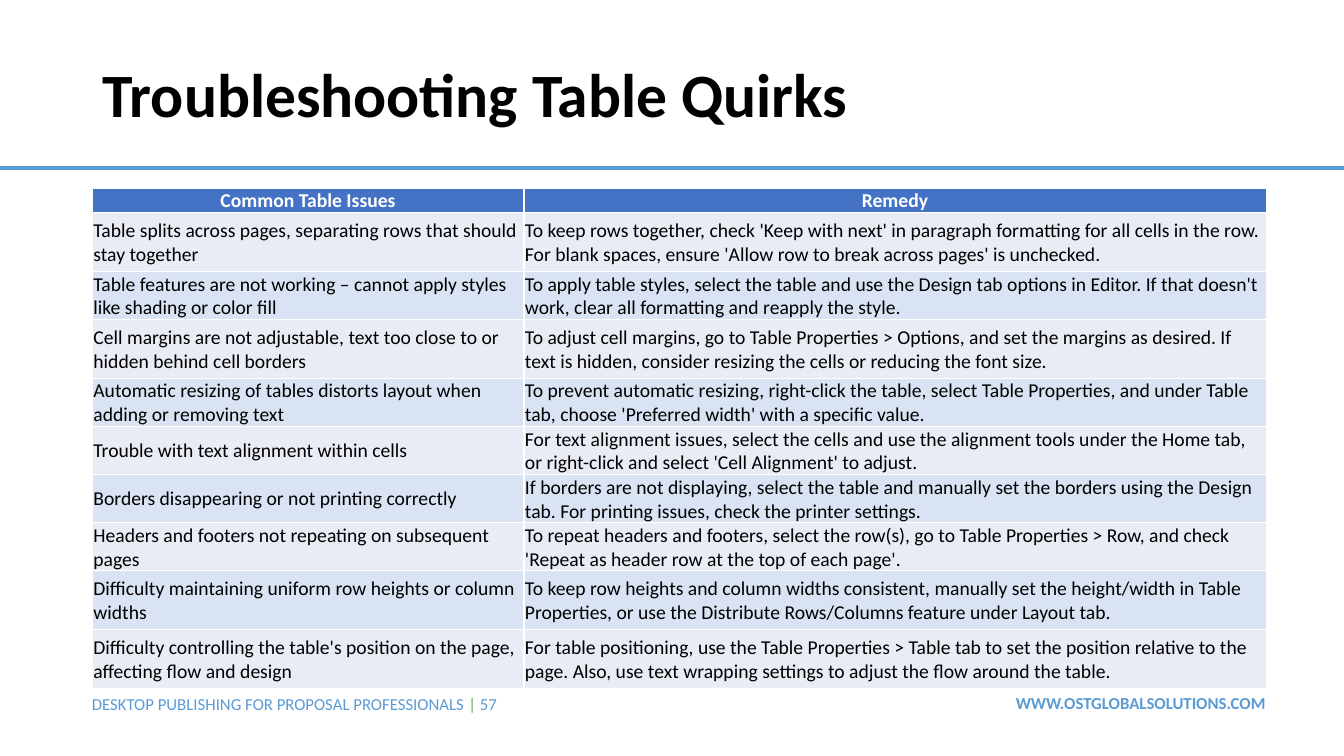
"""Build the slide on troubleshooting table quirks."""
from dataclasses import dataclass
from typing import Any, NamedTuple

from lxml import etree
from pptx import Presentation
from pptx import util as u
from pptx.dml import color
from pptx.enum import shapes, text
from pptx.oxml import ns


@dataclass(frozen=True)
class Theme:
    font: str = "Calibri"
    black: str = "000000"
    white: str = "FFFFFF"
    sky: str = "5B9BD5"
    green: str = "70AD47"
    head: str = "4472C4"
    bands: tuple[str, str] = ("E9EBF5", "DAE3F3")
    title: int = 44
    body: int = 14
    foot: int = 12


class Run(NamedTuple):
    words: str
    size: int
    tint: str
    bold: bool = False


class Box(NamedTuple):
    left: int
    top: int
    width: int
    height: int


class Foot(NamedTuple):
    box: Box
    align: Any
    runs: list[Run]


class Issue(NamedTuple):
    high: int
    fault: str
    remedy: str


LOOK = Theme()
SCALE = 9525
WIDE, TALL = 1280, 720
COLS = (411, 707)
TABLE = Box(88, 179, sum(COLS), 476)
TITLE = Box(88, 38, 757, 109)
RULE = 160
ONE, TWO = 42, 56
AL = text.PP_ALIGN
MID = text.MSO_ANCHOR.MIDDLE

FEET = [
    Foot(Box(822, 655, 393, 29), AL.RIGHT,
         [Run("WWW.OSTGLOBALSOLUTIONS.COM", LOOK.foot, LOOK.sky, True)]),
    Foot(Box(78, 656, 463, 29), AL.LEFT,
         [Run("DESKTOP PUBLISHING FOR PROPOSAL PROFESSIONALS ", LOOK.foot, LOOK.sky),
          Run("| ", LOOK.foot, LOOK.green),
          Run("57", LOOK.foot, LOOK.sky)]),
]

ISSUES = [
    Issue(19, "Common Table Issues", "Remedy"),
    Issue(TWO, "Table splits across pages, separating rows that should stay together",
          "To keep rows together, check 'Keep with next' in paragraph formatting for all "
          "cells in the row. For blank spaces, ensure 'Allow row to break across pages' "
          "is unchecked."),
    Issue(ONE, "Table features are not working – cannot apply styles like shading or color fill",
          "To apply table styles, select the table and use the Design tab options in Editor. "
          "If that doesn't work, clear all formatting and reapply the style."),
    Issue(TWO, "Cell margins are not adjustable, text too close to or hidden behind cell borders",
          "To adjust cell margins, go to Table Properties > Options, and set the margins as "
          "desired. If text is hidden, consider resizing the cells or reducing the font size."),
    Issue(ONE, "Automatic resizing of tables distorts layout when adding or removing text",
          "To prevent automatic resizing, right-click the table, select Table Properties, "
          "and under Table tab, choose 'Preferred width' with a specific value."),
    Issue(ONE, "Trouble with text alignment within cells",
          "For text alignment issues, select the cells and use the alignment tools under the "
          "Home tab, or right-click and select 'Cell Alignment' to adjust."),
    Issue(ONE, "Borders disappearing or not printing correctly",
          "If borders are not displaying, select the table and manually set the borders using "
          "the Design tab. For printing issues, check the printer settings."),
    Issue(ONE, "Headers and footers not repeating on subsequent pages",
          "To repeat headers and footers, select the row(s), go to Table Properties > Row, "
          "and check 'Repeat as header row at the top of each page'."),
    Issue(TWO, "Difficulty maintaining uniform row heights or column widths",
          "To keep row heights and column widths consistent, manually set the height/width in "
          "Table Properties, or use the Distribute Rows/Columns feature under Layout tab."),
    Issue(TWO, "Difficulty controlling the table's position on the page, affecting flow and design",
          "For table positioning, use the Table Properties > Table tab to set the position "
          "relative to the page. Also, use text wrapping settings to adjust the flow around "
          "the table."),
]


def px(count: int) -> u.Emu:
    """Turn px into EMU."""
    return u.Emu(count * SCALE)


def place(box: Box) -> list[u.Emu]:
    """Give the EMU lengths of a box."""
    return [px(side) for side in box]


def rgb(tint: str) -> color.RGBColor:
    """Turn a hex string into a colour."""
    return color.RGBColor.from_string(tint)


def write(para: Any, runs: list[Run], align: Any) -> None:
    """Add runs to a paragraph."""
    para.alignment = align
    for item in runs:
        run = para.add_run()
        run.text = item.words
        run.font.name = LOOK.font
        run.font.size = u.Pt(item.size)
        run.font.bold = item.bold
        run.font.color.rgb = rgb(item.tint)


def add_rule(slide: Any) -> None:
    """Draw the line below the title."""
    rule = slide.shapes.add_connector(
        shapes.MSO_CONNECTOR.STRAIGHT, 0, px(RULE), px(WIDE), px(RULE))
    rule.line.color.rgb = rgb(LOOK.sky)
    rule.line.width = u.Pt(3)
    etree.SubElement(rule.element.spPr, ns.qn("a:effectLst"))


def add_foot(slide: Any, foot: Foot) -> None:
    """Add one footer text."""
    frame = slide.shapes.add_textbox(*place(foot.box)).text_frame
    frame.word_wrap = True
    write(frame.paragraphs[0], foot.runs, foot.align)


def add_title(slide: Any) -> None:
    """Fill and move the title placeholder."""
    title = slide.shapes.title
    title.left, title.top, title.width, title.height = place(TITLE)
    frame = title.text_frame
    frame.auto_size = text.MSO_AUTO_SIZE.NONE
    frame.vertical_anchor = MID
    para = frame.paragraphs[0]
    para.line_spacing = 0.9
    run = Run("Troubleshooting Table Quirks", LOOK.title, LOOK.black, True)
    write(para, [run], AL.LEFT)


def edge(cell: Any) -> None:
    """Give a cell thin white borders."""
    props = cell._tc.get_or_add_tcPr()
    for side in ("lnL", "lnR", "lnT", "lnB"):
        line = etree.SubElement(props, ns.qn(f"a:{side}"), w=str(u.Pt(1)))
        fill = etree.SubElement(line, ns.qn("a:solidFill"))
        etree.SubElement(fill, ns.qn("a:srgbClr"), val=LOOK.white)


def fill_cell(cell: Any, words: str, row: int) -> None:
    """Format and write one cell."""
    head = row == 0
    edge(cell)
    cell.fill.solid()
    cell.fill.fore_color.rgb = rgb(LOOK.head if head else LOOK.bands[(row - 1) % 2])
    cell.margin_left = cell.margin_right = cell.margin_top = px(1)
    cell.margin_bottom = 0
    cell.vertical_anchor = text.MSO_ANCHOR.BOTTOM if head else MID
    run = Run(words, LOOK.body, LOOK.white if head else LOOK.black, head)
    write(cell.text_frame.paragraphs[0], [run], AL.CENTER if head else AL.LEFT)


def add_grid(slide: Any) -> None:
    """Add the table of issues."""
    grid = slide.shapes.add_table(len(ISSUES), len(COLS), *place(TABLE)).table
    for col, width in zip(grid.columns, COLS):
        col.width = px(width)
    for row, issue in enumerate(ISSUES):
        grid.rows[row].height = px(issue.high)
        for col, words in enumerate((issue.fault, issue.remedy)):
            fill_cell(grid.cell(row, col), words, row)


def main() -> None:
    """Build and save the deck."""
    deck = Presentation()
    deck.slide_width, deck.slide_height = px(WIDE), px(TALL)
    slide = deck.slides.add_slide(deck.slide_layouts[5])
    add_rule(slide)
    for foot in FEET:
        add_foot(slide, foot)
    add_title(slide)
    add_grid(slide)
    deck.save("out.pptx")


if __name__ == "__main__":
    main()
